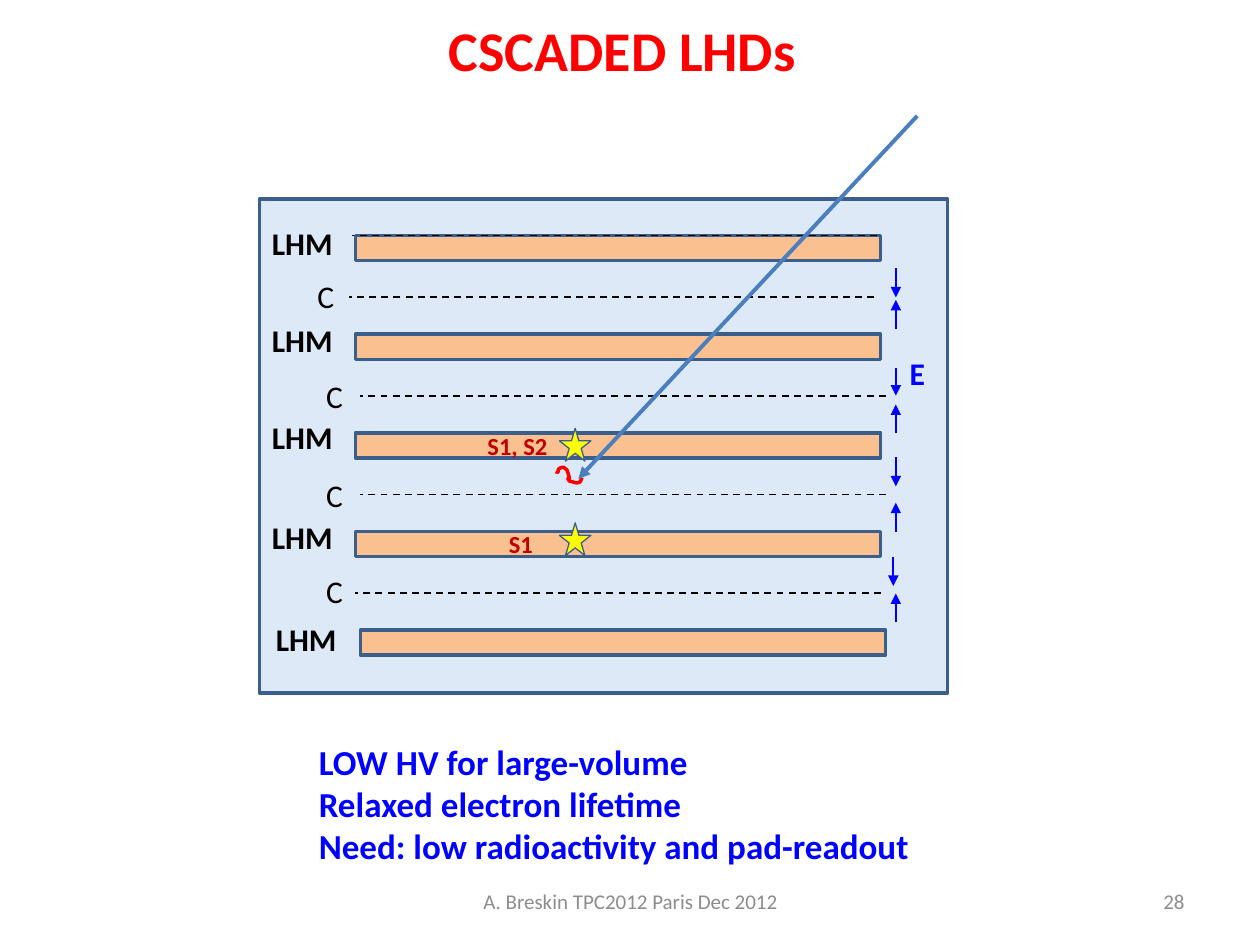
from dataclasses import dataclass

from lxml.etree import SubElement
from pptx import Presentation
from pptx.dml.color import RGBColor
from pptx.enum.dml import MSO_LINE
from pptx.enum.shapes import MSO_CONNECTOR, MSO_SHAPE
from pptx.enum.text import MSO_ANCHOR, PP_ALIGN
from pptx.oxml.ns import qn
from pptx.util import Inches, Pt


@dataclass(frozen=True)
class Theme:
    font: str = "Calibri"
    red: str = "FF0000"
    blue: str = "0000FF"
    black: str = "000000"
    gray: str = "8C8C8C"
    signal: str = "C00000"
    tank: str = "DDE9F7"
    bar: str = "FAC090"
    edge: str = "3A5F8C"
    track: str = "4B7EBC"
    star: str = "FFFF00"
    title: int = 32
    body: int = 20
    label: int = 18
    mark: int = 14
    foot: int = 12


THEME = Theme()

TITLE = "CSCADED LHDs"
NOTES = [
    "LOW HV for large-volume",
    "Relaxed electron lifetime",
    "Need: low radioactivity and pad-readout",
]
FOOT = "A. Breskin TPC2012 Paris Dec 2012"
PAGE = "28"

TANK = (2.06, 1.58, 5.46, 3.92)
WIDTH, THICK = 4.17, 0.2
TOP, PITCH = 1.87, 3.13 / 4
GRID_TOP = 2.36

# Left edge of each bar, then left and top of its label
BARS = [
    (2.82, 2.06, 1.73),
    (2.82, 2.06, 2.5),
    (2.82, 2.06, 3.27),
    (2.82, 2.06, 4.06),
    (2.86, 2.09, 4.87),
]
# Left edge of each cathode, then left and top of its label
GRIDS = [
    (2.77, 2.42, 2.15),
    (2.86, 2.49, 2.94),
    (2.86, 2.49, 3.73),
    (2.82, 2.49, 4.49),
]
# Field arrows: x, start y, end y
FIELD = [
    (7.11, 2.13, 2.36), (7.11, 2.61, 2.38),
    (7.11, 2.92, 3.14), (7.11, 3.44, 3.21),
    (7.11, 3.63, 3.86), (7.11, 4.22, 3.99),
    (7.09, 4.42, 4.65), (7.11, 4.94, 4.71),
]
STARS = [(4.44, 4.15), (4.44, 3.4)]
MARKS = [("S1, S2", (3.77, 3.37, 0.92, 0.34)), ("S1", (3.94, 4.15, 0.5, 0.34))]
TRACK = ((7.28, 0.92), (4.59, 3.8))
# Electron path: a start point, then cubic curves of three points each
SQUIGGLE = (4.62, 3.79), [
    ((4.61, 3.81), (4.61, 3.83), (4.59, 3.83)),
    ((4.58, 3.84), (4.54, 3.82), (4.52, 3.82)),
    ((4.48, 3.75), (4.55, 3.87), (4.5, 3.73)),
    ((4.49, 3.72), (4.48, 3.72), (4.48, 3.71)),
    ((4.46, 3.71), (4.45, 3.71), (4.44, 3.72)),
    ((4.43, 3.72), (4.43, 3.74), (4.43, 3.74)),
    ((4.43, 3.75), (4.42, 3.75), (4.42, 3.76)),
]


def rgb(code):
    return RGBColor.from_string(code)


def place(shape, box):
    shape.left, shape.top, shape.width, shape.height = map(Inches, box)


def write(shape, text, size=THEME.label, color=THEME.black, bold=False,
          align=PP_ALIGN.LEFT, anchor=MSO_ANCHOR.TOP, wrap=False):
    frame = shape.text_frame
    frame.word_wrap = wrap
    frame.vertical_anchor = anchor
    frame.text = text
    for para in frame.paragraphs:
        para.alignment = align
        para.space_before = Pt(0)
        font = para.font
        font.name, font.size, font.bold = THEME.font, Pt(size), bold
        font.color.rgb = rgb(color)


def label(slide, text, box, **style):
    write(slide.shapes.add_textbox(*map(Inches, box)), text, **style)


def block(slide, kind, box, fill, weight):
    shape = slide.shapes.add_shape(kind, *map(Inches, box))
    shape.shadow.inherit = False
    shape.fill.solid()
    shape.fill.fore_color.rgb = rgb(fill)
    shape.line.color.rgb = rgb(THEME.edge)
    shape.line.width = Pt(weight)


def rule(slide, start, end, color, weight=1, dash=False, arrow=False):
    line = slide.shapes.add_connector(
        MSO_CONNECTOR.STRAIGHT, *map(Inches, start + end))
    line.line.color.rgb = rgb(color)
    line.line.width = Pt(weight)
    if dash:
        line.line.dash_style = MSO_LINE.DASH
    props = line._element.spPr
    if arrow:
        SubElement(props.find(qn("a:ln")), qn("a:tailEnd"), type="triangle")
    SubElement(props, qn("a:effectLst"))


def bezier(start, curves, steps=8):
    """Return points along a chain of cubic curves."""
    points = []
    for one, two, end in curves:
        for step in range(1, steps + 1):
            t = step / steps
            u = 1 - t
            points.append(tuple(
                u**3 * a + 3 * u * u * t * b + 3 * u * t * t * c + t**3 * d
                for a, b, c, d in zip(start, one, two, end)))
        start = end
    return points


def squiggle(slide, start, curves):
    pen = slide.shapes.build_freeform(*map(Inches, start))
    points = [tuple(map(Inches, spot)) for spot in bezier(start, curves)]
    pen.add_line_segments(points, close=False)
    shape = pen.convert_to_shape()
    shape.shadow.inherit = False
    shape.fill.background()
    shape.line.color.rgb = rgb(THEME.red)
    shape.line.width = Pt(2)


def unbullet(shape):
    for para in shape.text_frame.paragraphs:
        props = para._p.get_or_add_pPr()
        props.set("marL", "0")
        props.set("indent", "0")
        SubElement(props, qn("a:buNone")) if props.find(qn("a:defRPr")) is None \
            else props.find(qn("a:defRPr")).addprevious(
                SubElement(props, qn("a:buNone")))


def detector(slide):
    block(slide, MSO_SHAPE.RECTANGLE, TANK, THEME.tank, 2)
    for row, (left, x, y) in enumerate(BARS):
        box = (left, TOP + row * PITCH, WIDTH, THICK)
        block(slide, MSO_SHAPE.RECTANGLE, box, THEME.bar, 2)
        label(slide, "LHM", (x, y, 0.69, 0.47), bold=True)
    rule(slide, (2.79 + WIDTH, TOP), (2.79, TOP), THEME.black, dash=True)
    for row, (left, x, y) in enumerate(GRIDS):
        level = GRID_TOP + row * PITCH
        rule(slide, (left + WIDTH, level), (left, level), THEME.black, dash=True)
        label(slide, "C", (x, y, 0.34, 0.4))
    for x, start, end in FIELD:
        rule(slide, (x, start), (x, end), THEME.blue, arrow=True)
    label(slide, "E", (7.12, 2.76, 0.32, 0.47), color=THEME.blue, bold=True)


def event(slide):
    for spot in STARS:
        block(slide, MSO_SHAPE.STAR_5_POINT, spot + (0.25, 0.26), THEME.star, 0.75)
    for text, box in MARKS:
        label(slide, text, box, size=THEME.mark, color=THEME.signal,
              bold=True, wrap=True)
    squiggle(slide, *SQUIGGLE)
    rule(slide, *TRACK, THEME.track, weight=2.25, arrow=True)


def main():
    deck = Presentation()
    deck.slide_width, deck.slide_height = Inches(10), Inches(7.5)
    slide = deck.slides.add_slide(deck.slide_layouts[1])
    title, body = slide.placeholders
    place(title, (0.44, 0, 9, 0.78))
    write(title, TITLE, size=THEME.title, color=THEME.red, bold=True,
          align=PP_ALIGN.CENTER, anchor=MSO_ANCHOR.MIDDLE, wrap=True)
    place(body, (2.43, 5.83, 4.92, 1.11))
    write(body, "\n".join(NOTES), size=THEME.body, color=THEME.blue, bold=True)
    unbullet(body)
    detector(slide)
    event(slide)
    foot = dict(size=THEME.foot, color=THEME.gray, anchor=MSO_ANCHOR.MIDDLE, wrap=True)
    label(slide, FOOT, (3.42, 6.95, 3.17, 0.4), align=PP_ALIGN.CENTER, **foot)
    label(slide, PAGE, (7.17, 6.95, 2.33, 0.4), align=PP_ALIGN.RIGHT, **foot)
    deck.save("out.pptx")


if __name__ == "__main__":
    main()
